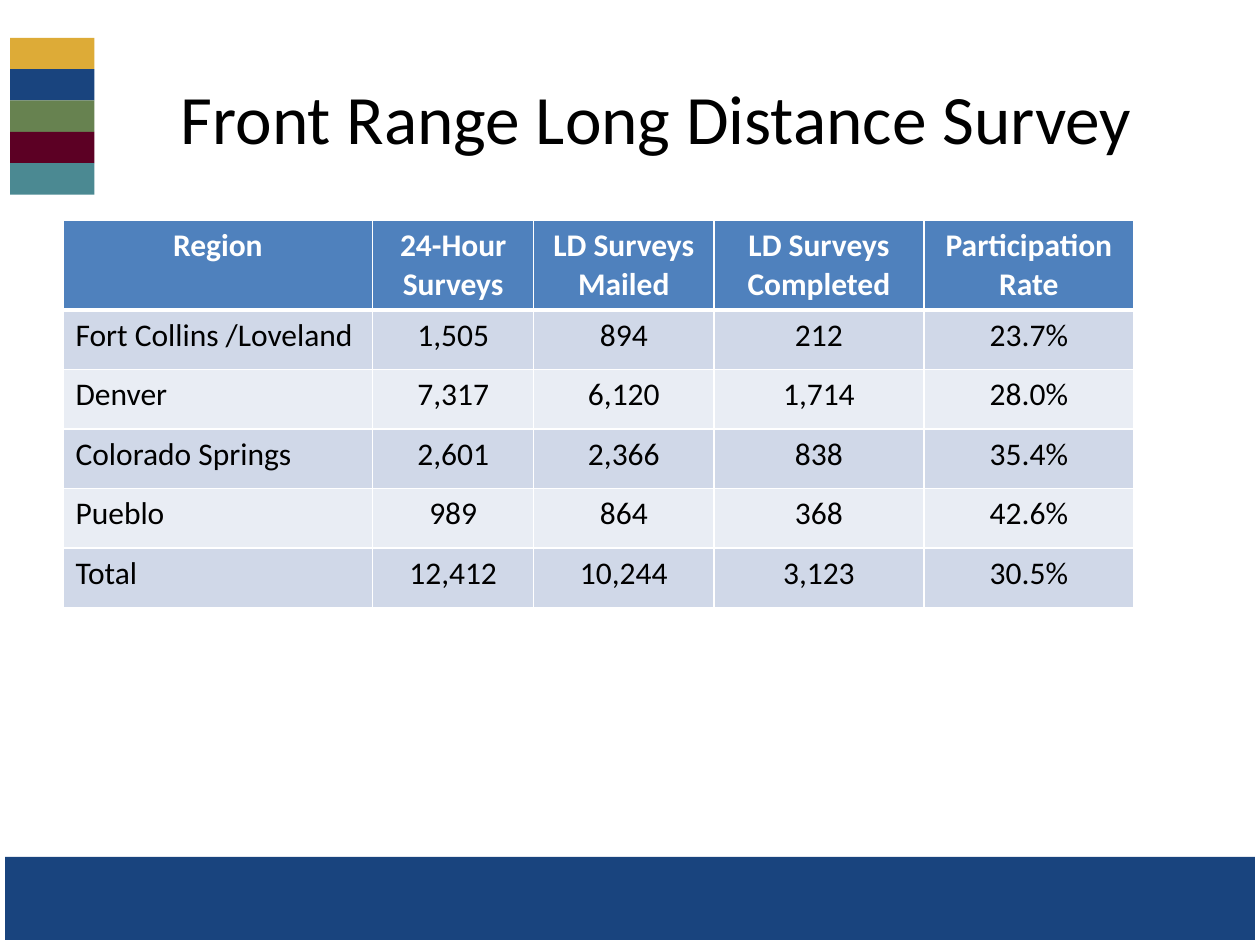
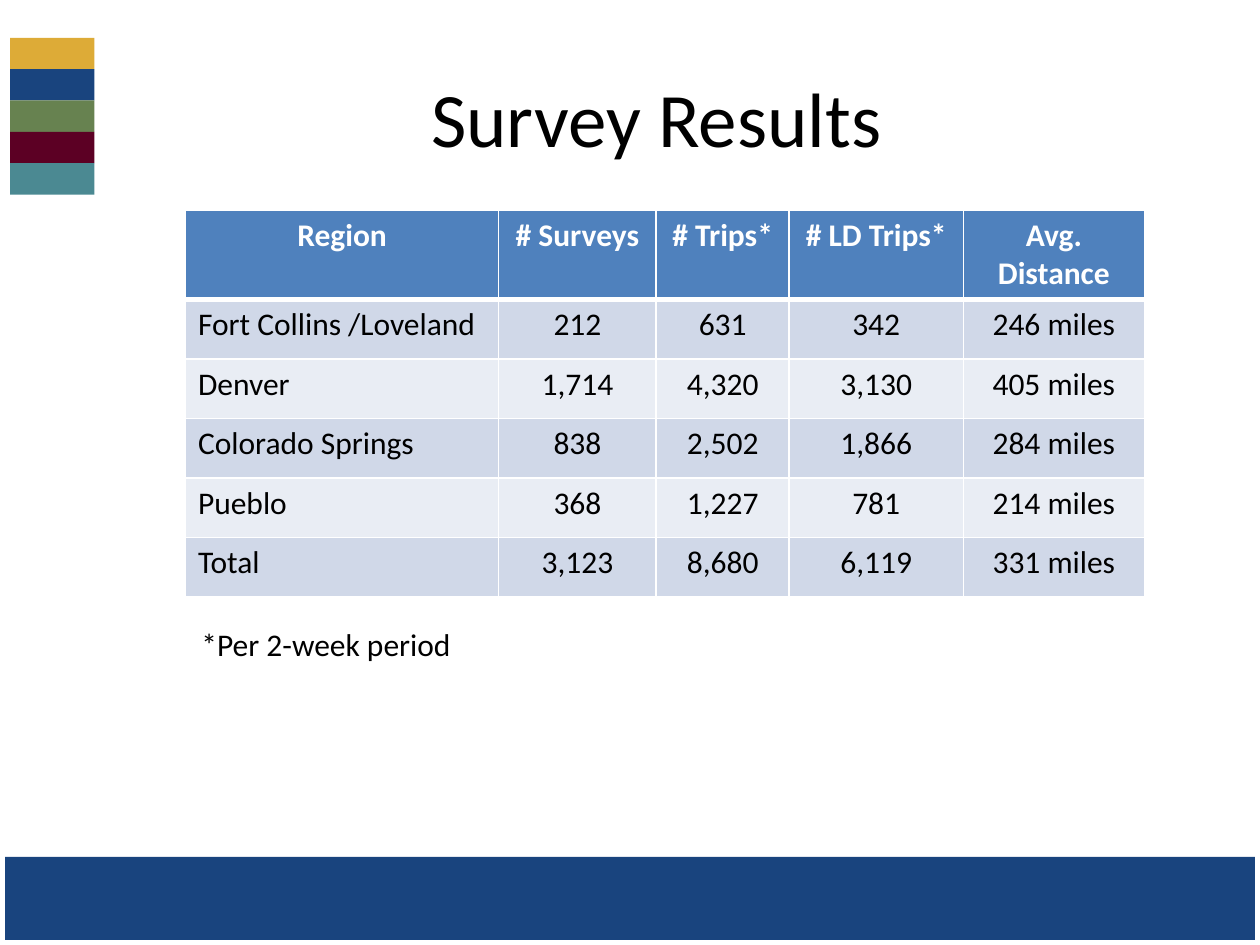
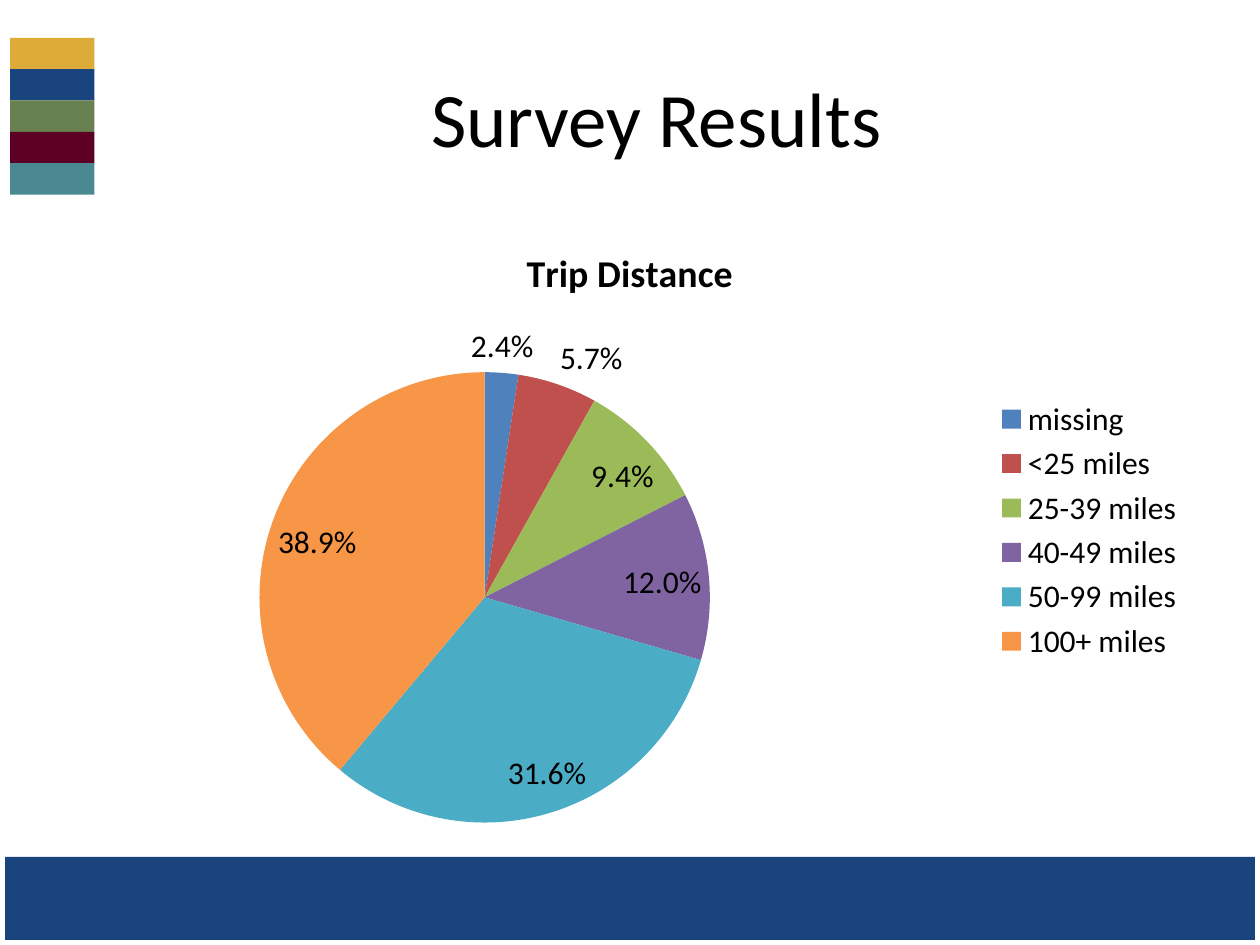
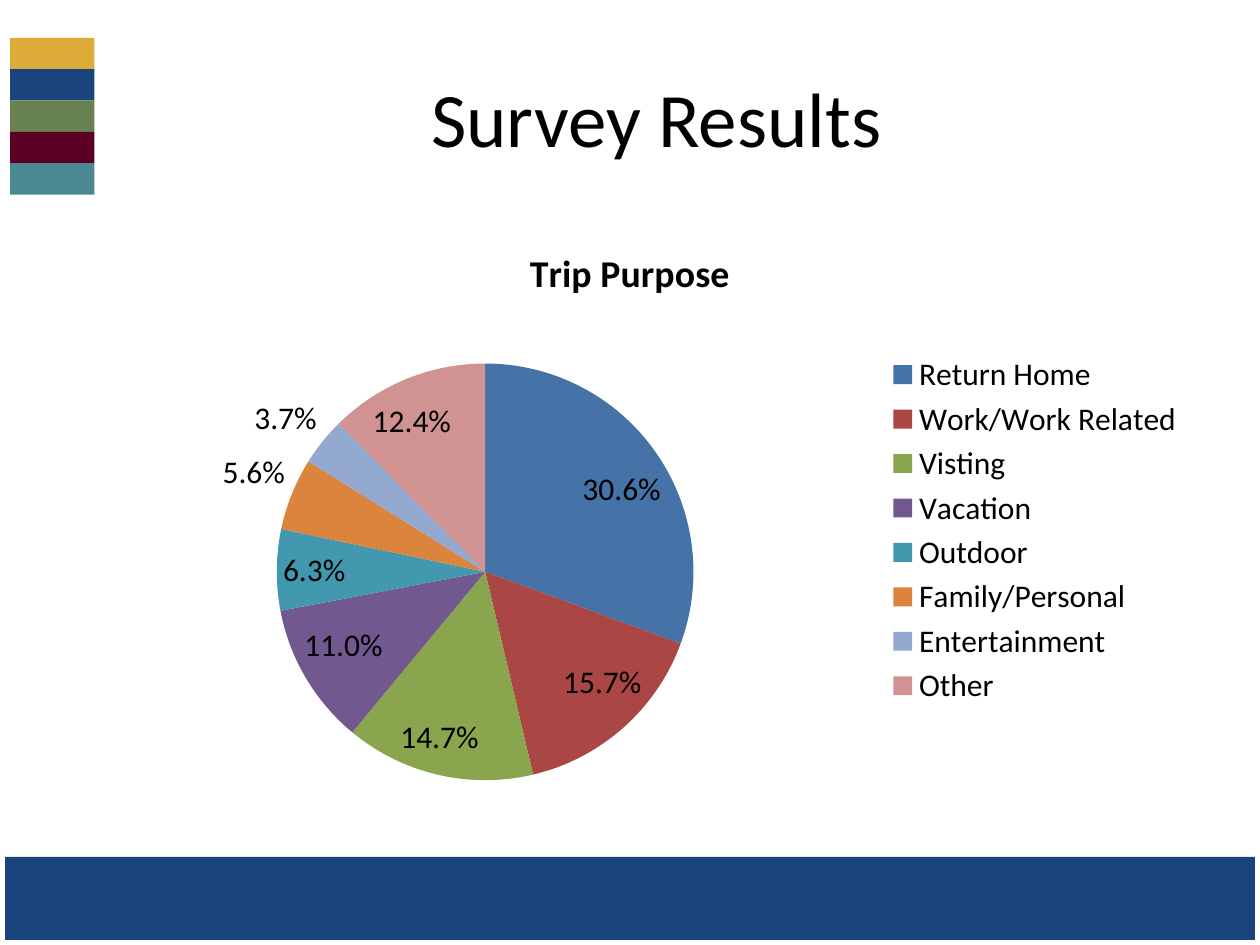
from lxml.etree import SubElement
from pptx import Presentation
from pptx.chart.data import CategoryChartData
from pptx.dml.color import RGBColor
from pptx.enum.chart import XL_CHART_TYPE as ChartType
from pptx.enum.chart import XL_LABEL_POSITION as LabelPosition
from pptx.enum.chart import XL_LEGEND_POSITION as LegendPosition
from pptx.enum.shapes import MSO_SHAPE as ShapeType
from pptx.enum.text import MSO_ANCHOR as Anchor
from pptx.enum.text import MSO_AUTO_SIZE as AutoSize
from pptx.enum.text import PP_ALIGN as Align
from pptx.oxml.ns import qn
from pptx.util import Pt

FONT = "Calibri"
BLACK, WHITE, NAVY = "000000", "FFFFFF", "19447E"
STRIPES = ["DDAB37", NAVY, "678250", "5C0024", "4B8992"]
HEADER_FILL, ROW_FILLS = "4F81BD", ["D0D8E8", "E9EDF4"]
DISTANCE_COLORS = ["4F81BD", "C0504D", "9BBB59", "8064A2", "4BACC6", "F79646"]
PURPOSE_COLORS = ["4572A7", "AA4643", "89A54E", "71588F",
                  "4198AF", "DB843D", "93A9CF", "D19392"]
SLIDE_WIDTH, SLIDE_HEIGHT = 720, 540
TITLE_BOX = (66.24, 21.6, 617.76, 90)
STRIPE_BOX = (5.76, 21.6, 48.24, 89.6)
BAND_BOX = (0, 489.6, 720, 50.4)
CHART_BOX = (36, 126, 648, 354)
HEADER_HEIGHT, ROW_HEIGHT = 51, 34


def color(value):
    return RGBColor.from_string(value)


def points(box):
    return [Pt(length) for length in box]


def format_font(font, size=18, fill=BLACK, bold=False):
    font.name = FONT
    font.size = Pt(size)
    font.bold = bold
    font.color.rgb = color(fill)


def write(frame, text, align=Align.LEFT, **font_options):
    paragraph = frame.paragraphs[0]
    paragraph.alignment = align
    run = paragraph.add_run()
    run.text = text
    format_font(run.font, **font_options)


def add_rectangle(slide, box, fill=None, line=None, line_width=1):
    shape = slide.shapes.add_shape(ShapeType.RECTANGLE, *points(box))
    shape.shadow.inherit = False
    if fill:
        shape.fill.solid()
        shape.fill.fore_color.rgb = color(fill)
    else:
        shape.fill.background()
    if line:
        shape.line.color.rgb = color(line)
        shape.line.width = Pt(line_width)
    else:
        shape.line.fill.background()
    return shape


def add_stripes(slide, box):
    left, top, width, height = box
    step = height / len(STRIPES)
    return [add_rectangle(slide, (left, top + index * step, width, step), fill)
            for index, fill in enumerate(STRIPES)]


def decorate_master(master, slide):
    shapes = [add_rectangle(slide, BAND_BOX, NAVY)]
    shapes += add_stripes(slide, STRIPE_BOX)
    shapes.append(add_rectangle(slide, (0, 0, SLIDE_WIDTH, SLIDE_HEIGHT),
                                line=WHITE, line_width=6))
    for index, shape in enumerate(shapes):
        shape.element.find(".//" + qn("p:cNvPr")).set("id", str(100 + index))
        master.shapes.element.insert(2 + index, shape.element)


def add_title_slide(presentation, title, size=44):
    slide = presentation.slides.add_slide(presentation.slide_layouts[5])
    shape = slide.shapes.title
    shape.left, shape.top, shape.width, shape.height = points(TITLE_BOX)
    shape.text_frame.vertical_anchor = Anchor.MIDDLE
    write(shape.text_frame, title, align=Align.CENTER, size=size)
    return slide


def set_borders(cell, bottom):
    properties = cell._tc.get_or_add_tcPr()
    for side, width in (("L", 1), ("R", 1), ("T", 1), ("B", bottom)):
        line = SubElement(properties, qn(f"a:ln{side}"), w=str(Pt(width)))
        fill = SubElement(line, qn("a:solidFill"))
        SubElement(fill, qn("a:srgbClr"), val=WHITE)


def add_region_table(slide, left, top, widths, rows):
    height = HEADER_HEIGHT + ROW_HEIGHT * (len(rows) - 1)
    box = (left, top, sum(widths), height)
    table = slide.shapes.add_table(len(rows), len(widths), *points(box)).table
    for column, width in zip(table.columns, widths):
        column.width = Pt(width)
    for row_index, values in enumerate(rows):
        header = row_index == 0
        table.rows[row_index].height = Pt(HEADER_HEIGHT if header else ROW_HEIGHT)
        row_fill = HEADER_FILL if header else ROW_FILLS[(row_index - 1) % 2]
        for column_index, value in enumerate(values):
            cell = table.cell(row_index, column_index)
            set_borders(cell, bottom=3 if header else 1)
            cell.fill.solid()
            cell.fill.fore_color.rgb = color(row_fill)
            centred = header or column_index > 0
            write(cell.text_frame, value,
                  align=Align.CENTER if centred else Align.LEFT,
                  fill=WHITE if header else BLACK, bold=header)


def add_footnote(slide, box, text):
    frame = slide.shapes.add_textbox(*points(box)).text_frame
    frame.word_wrap = True
    frame.auto_size = AutoSize.SHAPE_TO_FIT_TEXT
    write(frame, text)


def add_pie(slide, box, title, shares, colors):
    data = CategoryChartData(number_format="0.0%")
    data.categories = list(shares)
    data.add_series(title, list(shares.values()))
    chart = slide.shapes.add_chart(ChartType.PIE, *points(box), data).chart
    format_font(chart.font)
    chart.has_title = True
    write(chart.chart_title.text_frame, title, align=Align.CENTER,
          size=21.6, bold=True)
    chart.chart_title.include_in_layout = False
    chart.has_legend = True
    chart.legend.position = LegendPosition.RIGHT
    chart.legend.include_in_layout = False
    format_font(chart.legend.font)
    plot = chart.plots[0]
    plot.vary_by_categories = True
    for index, fill in enumerate(colors):
        slice_format = plot.series[0].points[index].format
        slice_format.fill.solid()
        slice_format.fill.fore_color.rgb = color(fill)
        slice_format.line.fill.background()
    labels = plot.series[0].data_labels
    labels.show_value = True
    labels.show_percentage = False
    labels.number_format = "0.0%"
    labels.number_format_is_linked = False
    labels.position = LabelPosition.BEST_FIT
    format_font(labels.font)


def main():
    presentation = Presentation()
    presentation.slide_width = Pt(SLIDE_WIDTH)
    presentation.slide_height = Pt(SLIDE_HEIGHT)

    slide = add_title_slide(presentation, "Front Range Long Distance Survey", size=39.6)
    decorate_master(presentation.slide_master, slide)
    add_region_table(slide, 36, 126, [177, 92, 103, 120, 120], [
        ["Region", "24-Hour Surveys", "LD Surveys Mailed",
         "LD Surveys Completed", "Participation Rate"],
        ["Fort Collins /Loveland", "1,505", "894", "212", "23.7%"],
        ["Denver", "7,317", "6,120", "1,714", "28.0%"],
        ["Colorado Springs", "2,601", "2,366", "838", "35.4%"],
        ["Pueblo", "989", "864", "368", "42.6%"],
        ["Total", "12,412", "10,244", "3,123", "30.5%"],
    ])

    slide = add_title_slide(presentation, "Survey Results")
    add_region_table(slide, 106, 120, [179, 90, 76, 99.5, 103.5], [
        ["Region", "# Surveys", "# Trips*", "# LD Trips*", "Avg. Distance"],
        ["Fort Collins /Loveland", "212", "631", "342", "246 miles"],
        ["Denver", "1,714", "4,320", "3,130", "405 miles"],
        ["Colorado Springs", "838", "2,502", "1,866", "284 miles"],
        ["Pueblo", "368", "1,227", "781", "214 miles"],
        ["Total", "3,123", "8,680", "6,119", "331 miles"],
    ])
    add_footnote(slide, (108, 353.5, 342, 29), "*Per 2-week period")

    slide = add_title_slide(presentation, "Survey Results")
    add_pie(slide, CHART_BOX, "Trip Distance", {
        "missing": 0.024, "<25 miles": 0.057, "25-39 miles": 0.094,
        "40-49 miles": 0.12, "50-99 miles": 0.316, "100+ miles": 0.389,
    }, DISTANCE_COLORS)

    slide = add_title_slide(presentation, "Survey Results")
    add_pie(slide, CHART_BOX, "Trip Purpose", {
        "Return Home": 0.306, "Work/Work Related": 0.157, "Visting": 0.147,
        "Vacation": 0.11, "Outdoor": 0.063, "Family/Personal": 0.056,
        "Entertainment": 0.037, "Other": 0.124,
    }, PURPOSE_COLORS)

    presentation.save("out.pptx")


if __name__ == "__main__":
    main()
